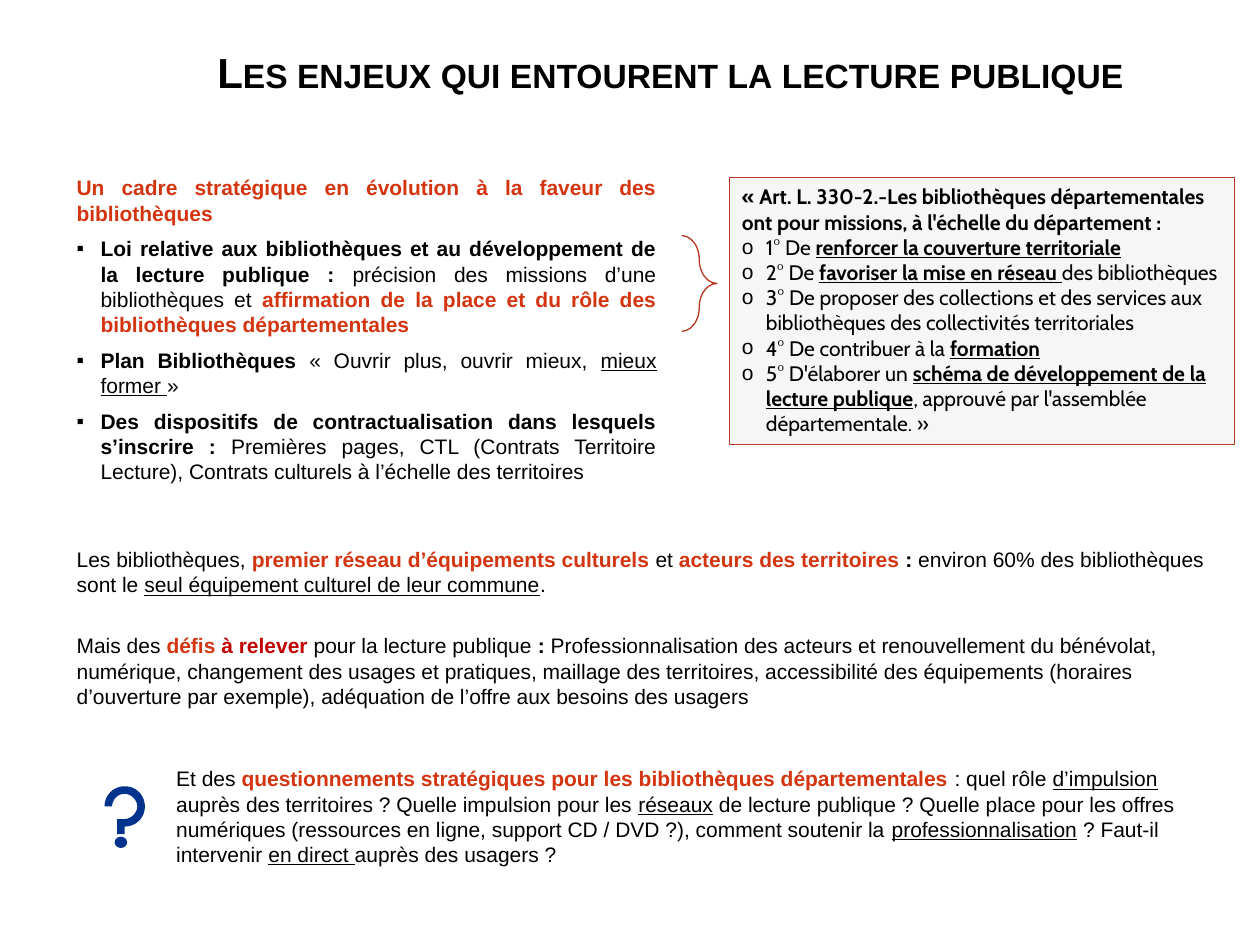
from lxml import etree
from pptx import Presentation
from pptx import util as u
from pptx.dml.color import RGBColor
from pptx.enum import shapes, text
from pptx.oxml.ns import qn

BLACK = RGBColor(0x00, 0x00, 0x00)
RED = RGBColor(0xD3, 0x35, 0x10)
DARK = RGBColor(0xC0, 0x00, 0x00)
BRICK = RGBColor(0xB7, 0x37, 0x20)
GREY = RGBColor(0xD9, 0xD9, 0xD9)
BLUE = RGBColor(0x00, 0x33, 0x8D)
TONES = {"r": RED, "d": DARK}
LEFT = text.PP_ALIGN.LEFT
JUST = text.PP_ALIGN.JUSTIFY

FRAME = [
    [("Un cadre stratégique en évolution à la faveur des bibliothèques", "br")],
    [("Loi relative aux bibliothèques et au développement de la lecture publique : ", "b"),
     ("précision des missions d’une bibliothèques et ", ""),
     ("affirmation de la place et du rôle des bibliothèques départementales", "br")],
    [("Plan Bibliothèques ", "b"), ("« Ouvrir plus, ouvrir mieux, ", ""),
     ("mieux former ", "u"), ("»", "")],
    [("Des dispositifs de contractualisation dans lesquels s’inscrire : ", "b"),
     ("Premières pages, CTL (Contrats Territoire Lecture), "
      "Contrats culturels à l’échelle des territoires", "")],
]
LAW = [
    [("« Art. L. 330-2.-Les bibliothèques départementales ont pour missions, "
      "à l'échelle du département :", "b")],
    [("1° De ", ""), ("renforcer la couverture territoriale", "bu")],
    [("2° De ", ""), ("favoriser la mise en réseau ", "bu"), ("des bibliothèques", "")],
    [("3° De proposer des collections et des services aux bibliothèques "
      "des collectivités territoriales", "")],
    [("4° De contribuer à la ", ""), ("formation", "bu")],
    [("5° D'élaborer un ", ""),
     ("schéma de développement de la lecture publique", "bu"),
     (", approuvé par l'assemblée départementale. »", "")],
]
STAKES = [
    [("Les bibliothèques, ", ""), ("premier réseau d’équipements culturels ", "br"),
     ("et ", ""), ("acteurs des territoires ", "br"), (": ", "b"),
     ("environ 60% des bibliothèques sont le ", ""),
     ("seul équipement culturel de leur commune", "u"), (".", "")],
    [("Mais des ", ""), ("défis ", "br"), ("à relever ", "bd"),
     ("pour la lecture publique ", ""), (": ", "b"),
     ("Professionnalisation des acteurs et renouvellement du bénévolat, numérique, "
      "changement des usages et pratiques, maillage des territoires, accessibilité des "
      "équipements (horaires d’ouverture par exemple), adéquation de l’offre aux besoins "
      "des usagers", "")],
]
ASK = [
    [("Et des ", ""),
     ("questionnements stratégiques pour les bibliothèques départementales ", "br"),
     (": quel rôle ", ""), ("d’impulsion", "u"),
     (" auprès des territoires ? Quelle impulsion pour les ", ""), ("réseaux", "u"),
     (" de lecture publique ? Quelle place pour les offres numériques (ressources en "
      "ligne, support CD / DVD ?), comment soutenir la ", ""),
     ("professionnalisation", "u"), (" ? Faut-il intervenir ", ""),
     ("en direct ", "u"), ("auprès des usagers ?", "")],
]
HOOK = [
    [(0.99, 6.24), (1.08, 6.24), (1.15, 6.31), (1.15, 6.4)],
    [(1.15, 6.4), (1.15, 6.49), (1.08, 6.56), (0.99, 6.56)],
    [(0.99, 6.62)], [(0.93, 6.62)], [(0.93, 6.5)], [(0.99, 6.5)],
    [(0.99, 6.5), (1.04, 6.5), (1.09, 6.45), (1.09, 6.4)],
    [(1.09, 6.4), (1.09, 6.35), (1.04, 6.3), (0.99, 6.3)],
    [(0.99, 6.3), (0.93, 6.3), (0.89, 6.35), (0.89, 6.4)],
    [(0.83, 6.4)],
    [(0.83, 6.4), (0.83, 6.31), (0.9, 6.24), (0.99, 6.24)],
]


def curve(pts, steps=12):
    if len(pts) == 1:
        return pts
    a, b, c, d = pts
    out = []
    for i in range(1, steps + 1):
        t = i / steps
        s = 1 - t
        out.append(tuple(s**3 * p + 3 * s * s * t * q + 3 * s * t * t * r + t**3 * e
                         for p, q, r, e in zip(a, b, c, d)))
    return out


class Page:
    def __init__(self, slide, font="Arial", size=12):
        self.slide = slide
        self.font = font
        self.size = size

    def box(self, *at):
        return [u.Inches(n) for n in at]

    def title(self, words, *at):
        item = self.slide.shapes.title
        item.left, item.top, item.width, item.height = self.box(*at)
        frame = item.text_frame
        frame.vertical_anchor = text.MSO_ANCHOR.MIDDLE
        para = frame.paragraphs[0]
        para.alignment = text.PP_ALIGN.CENTER
        para.line_spacing = u.Pt(34.2)
        run = para.add_run()
        run.text = words
        run._r.get_or_add_rPr().set("cap", "small")
        self.face(para.font, self.font, 24)
        para.font.bold = True

    def face(self, font, name, size):
        font.name = name
        font.size = u.Pt(size)
        font.color.rgb = BLACK

    def fill(self, frame, paras, font=None, align=LEFT, mark=None, gap=0):
        frame.word_wrap = True
        frame.vertical_anchor = text.MSO_ANCHOR.TOP
        for i, parts in enumerate(paras):
            para = frame.add_paragraph() if i else frame.paragraphs[0]
            para.alignment = align
            if i < len(paras) - 1:
                para.space_after = u.Pt(gap)
            if mark and i:
                self.bullet(para, mark)
            self.face(para.font, font or self.font, self.size)
            for words, style in parts:
                run = para.add_run()
                run.text = words
                if "b" in style:
                    run.font.bold = True
                if "u" in style:
                    run.font.underline = True
                for key in TONES:
                    if key in style:
                        run.font.color.rgb = TONES[key]

    def bullet(self, para, mark):
        props = para._p.get_or_add_pPr()
        step = u.Inches(0.19)
        props.set("marL", str(step))
        props.set("indent", str(-step))
        etree.SubElement(props, qn("a:buFont")).set("typeface", self.font)
        etree.SubElement(props, qn("a:buChar")).set("char", mark)

    def note(self, at, paras, **style):
        item = self.slide.shapes.add_textbox(*self.box(*at))
        self.fill(item.text_frame, paras, **style)

    def shape(self, kind, at):
        item = self.slide.shapes.add_shape(kind, *self.box(*at))
        item.shadow.inherit = False
        item.fill.background()
        item.line.color.rgb = BRICK
        item.line.width = u.Pt(0.75)
        return item

    def panel(self, at, paras, **style):
        item = self.shape(shapes.MSO_SHAPE.RECTANGLE, at)
        item.fill.solid()
        item.fill.fore_color.rgb = GREY
        tone = item._element.spPr.find(qn("a:solidFill"))[0]
        etree.SubElement(tone, qn("a:alpha")).set("val", "23000")
        self.fill(item.text_frame, paras, **style)

    def brace(self, *at):
        item = self.shape(shapes.MSO_SHAPE.RIGHT_BRACE, at)
        item.adjustments[0] = 0.69
        item.adjustments[1] = 0.5

    def query(self, hook, dot):
        group = self.slide.shapes.add_group_shape()
        pts = [self.box(*p) for part in hook for p in curve(part)]
        pen = group.shapes.build_freeform(*self.box(*hook[0][0]))
        pen.add_line_segments(pts, close=True)
        oval = group.shapes.add_shape(shapes.MSO_SHAPE.OVAL, *self.box(*dot))
        for item in (pen.convert_to_shape(), oval):
            item.shadow.inherit = False
            item.fill.solid()
            item.fill.fore_color.rgb = BLUE
            item.line.fill.background()


def main():
    deck = Presentation()
    deck.slide_width, deck.slide_height = u.Inches(10), u.Inches(7.5)
    page = Page(deck.slides.add_slide(deck.slide_layouts[5]))
    page.title("Les enjeux qui entourent la lecture publique", 1.14, 0.09, 8.36, 0.88)
    page.note((0.51, 1.34, 4.8, 2.57), FRAME, align=JUST, mark="▪", gap=6)
    page.panel((5.79, 1.41, 4.01, 2.12), LAW, font="Cabin", mark="o")
    page.note((0.51, 4.29, 9.29, 1.6), STAKES, gap=20.5)
    page.brace(5.41, 1.87, 0.28, 0.76)
    page.query(HOOK, (0.91, 6.64, 0.1, 0.09))
    page.note((1.3, 6.03, 8.5, 0.91), ASK)
    deck.save("out.pptx")


if __name__ == "__main__":
    main()
